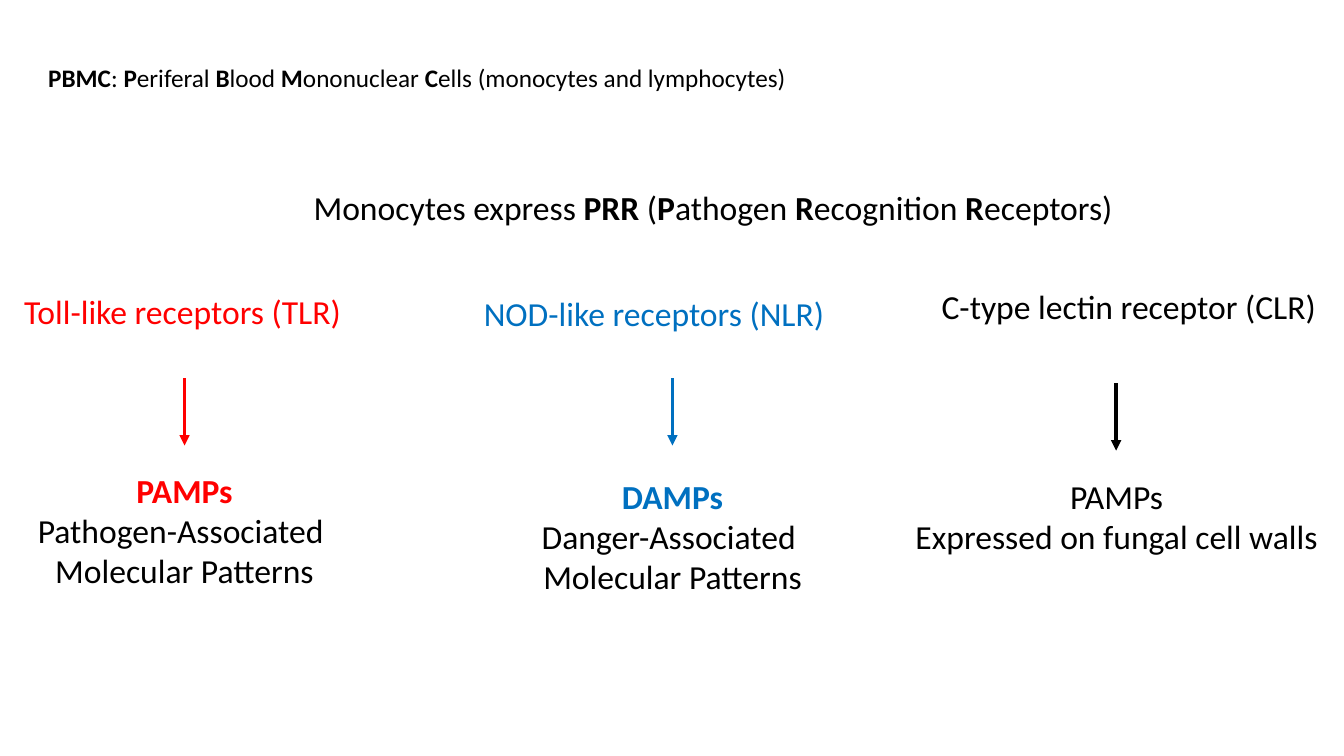
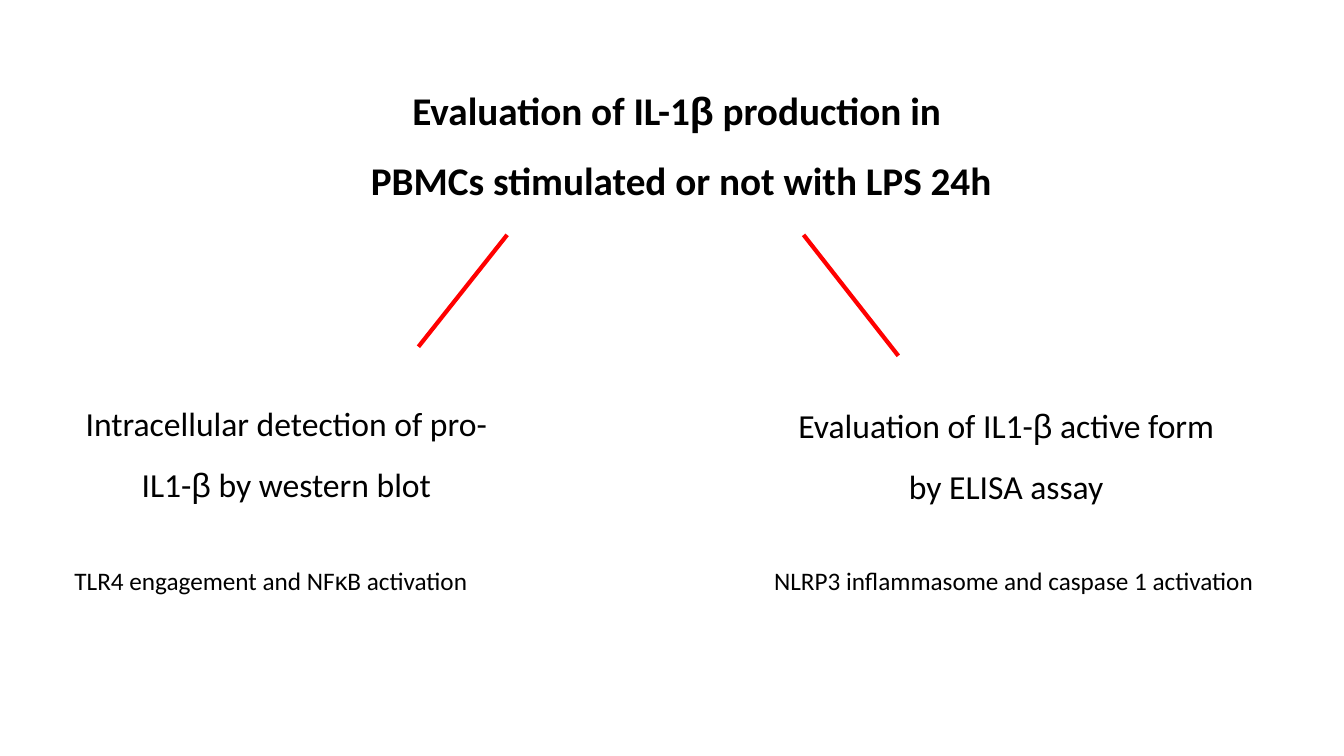
from dataclasses import dataclass
from itertools import groupby

from pptx import Presentation
from pptx.dml.color import RGBColor
from pptx.enum.shapes import MSO_CONNECTOR
from pptx.enum.text import MSO_ANCHOR, MSO_AUTO_SIZE, PP_ALIGN
from pptx.oxml.ns import qn
from pptx.util import Inches, Pt
from lxml import etree

LEFT, CENTER = PP_ALIGN.LEFT, PP_ALIGN.CENTER
TOP = MSO_ANCHOR.TOP
FIT_SHAPE = MSO_AUTO_SIZE.SHAPE_TO_FIT_TEXT
STRAIGHT = MSO_CONNECTOR.STRAIGHT
TITLE_ONLY, BLANK_BULLET_MARK = 5, "**"


@dataclass(frozen=True)
class Theme:
    black: RGBColor = RGBColor(0x00, 0x00, 0x00)
    red: RGBColor = RGBColor(0xFF, 0x00, 0x00)
    blue: RGBColor = RGBColor(0x00, 0x70, 0xC0)
    font: str = "Calibri"
    greek_font: str = "Arial"
    note: int = 18
    body: int = 24
    heading: int = 28
    arrow_width: float = 2.5
    branch_width: float = 3


THEME = Theme()
BOLD_MARK = BLANK_BULLET_MARK


def is_greek(letter):
    return "α" <= letter <= "ω"


def write_text(frame, text, *, size=THEME.body, color=THEME.black,
               lead_color=None, align=LEFT, spacing=1.0, wrap=False):
    """Write one paragraph per line; ** toggles bold, Greek letters get their own font."""
    frame.word_wrap = wrap
    frame.auto_size = FIT_SHAPE
    frame.vertical_anchor = TOP
    for index, line in enumerate(text.split("\n")):
        paragraph = frame.paragraphs[0] if index == 0 else frame.add_paragraph()
        paragraph.alignment = align
        paragraph.line_spacing = spacing
        line_color = lead_color if lead_color and index == 0 else color
        for part, piece in enumerate(line.split(BOLD_MARK)):
            for greek, letters in groupby(piece, is_greek):
                run = paragraph.add_run()
                run.text = "".join(letters)
                run.font.name = THEME.greek_font if greek else THEME.font
                run.font.size = Pt(size)
                run.font.bold = part % 2 == 1
                run.font.color.rgb = line_color


class Deck:
    def __init__(self):
        self.presentation = Presentation()
        self.presentation.slide_width = Inches(13.33)
        self.presentation.slide_height = Inches(7.5)
        self.slide = None

    def add_slide(self):
        layout = self.presentation.slide_layouts[TITLE_ONLY]
        self.slide = self.presentation.slides.add_slide(layout)

    def title(self, text, left, top, width, height, **text_format):
        shape = self.slide.shapes.title
        shape.left, shape.top = Inches(left), Inches(top)
        shape.width, shape.height = Inches(width), Inches(height)
        write_text(shape.text_frame, text, **text_format)

    def text(self, text, left, top, width, height, **text_format):
        shape = self.slide.shapes.add_textbox(
            Inches(left), Inches(top), Inches(width), Inches(height))
        write_text(shape.text_frame, text, **text_format)

    def line(self, start, end, color, width, arrow=False):
        connector = self.slide.shapes.add_connector(
            STRAIGHT, *(Inches(value) for value in (*start, *end)))
        connector.line.color.rgb = color
        connector.line.width = Pt(width)
        if arrow:
            outline = connector.line._get_or_add_ln()
            etree.SubElement(outline, qn("a:tailEnd"), type="triangle")
        etree.SubElement(connector._element.spPr, qn("a:effectLst"))


def build_receptors(deck):
    deck.add_slide()
    deck.text("**PBMC**: **P**eriferal **B**lood **M**ononuclear **C**ells "
              "(monocytes and lymphocytes)",
              0.38, 0.57, 7.57, 0.4, size=THEME.note)
    deck.title("Monocytes express **PRR** (**P**athogen **R**ecognition **R**eceptors)",
               3.01, 1.8, 8.2, 0.5)

    # One column per receptor family: name, arrow, recognised patterns
    columns = [
        (THEME.red, "Toll-like receptors (TLR)", (0.14, 2.84, 3.38, 0.5), (1.83, 3.75),
         "**PAMPs**\nPathogen-Associated \nMolecular Patterns", (0.26, 4.61, 3.14, 1.31)),
        (THEME.blue, "NOD-like receptors (NLR)", (4.7, 2.86, 3.61, 0.5), (6.67, 3.75),
         "**DAMPs**\nDanger-Associated \nMolecular Patterns", (5.26, 4.67, 2.82, 1.31)),
        (THEME.black, "C-type lectin receptor (CLR)", (9.24, 2.79, 3.95, 0.5), (11.07, 3.8),
         "PAMPs\nExpressed on fungal cell walls", (8.96, 4.67, 4.23, 0.91)),
    ]
    for color, receptor, receptor_box, (x, y), patterns, patterns_box in columns:
        deck.text(receptor, *receptor_box, color=color)
        deck.line((x, y), (x, y + 0.67), color, THEME.arrow_width, arrow=True)
        deck.text(patterns, *patterns_box, lead_color=color, align=CENTER)


def build_evaluation(deck):
    deck.add_slide()
    deck.title("**Evaluation of IL-1β production in **\n"
               "**PBMCs stimulated or not with LPS 24h**",
               3.54, 0.57, 6.43, 1.44, size=THEME.heading, align=CENTER, spacing=1.5)

    # Two branches: line, assay, mechanism
    branches = [
        ((5.03, 2.33), (4.15, 3.44),
         "Intracellular detection of pro-IL1-β by western blot", (0.64, 3.75),
         "TLR4 engagement and NFκB activation", (0.64, 5.56, 4.13, 0.4)),
        ((7.97, 2.33), (8.91, 3.53),
         "Evaluation of IL1-β active form by ELISA assay", (7.78, 3.77),
         "NLRP3 inflammasome and caspase 1 activation", (7.58, 5.56, 5.01, 0.4)),
    ]
    for start, end, assay, assay_corner, mechanism, mechanism_box in branches:
        deck.line(start, end, THEME.red, THEME.branch_width)
        deck.text(assay, *assay_corner, 4.4, 1.25, align=CENTER, spacing=1.5, wrap=True)
        deck.text(mechanism, *mechanism_box, size=THEME.note)


def main():
    deck = Deck()
    build_receptors(deck)
    build_evaluation(deck)
    deck.presentation.save("out.pptx")


if __name__ == "__main__":
    main()
